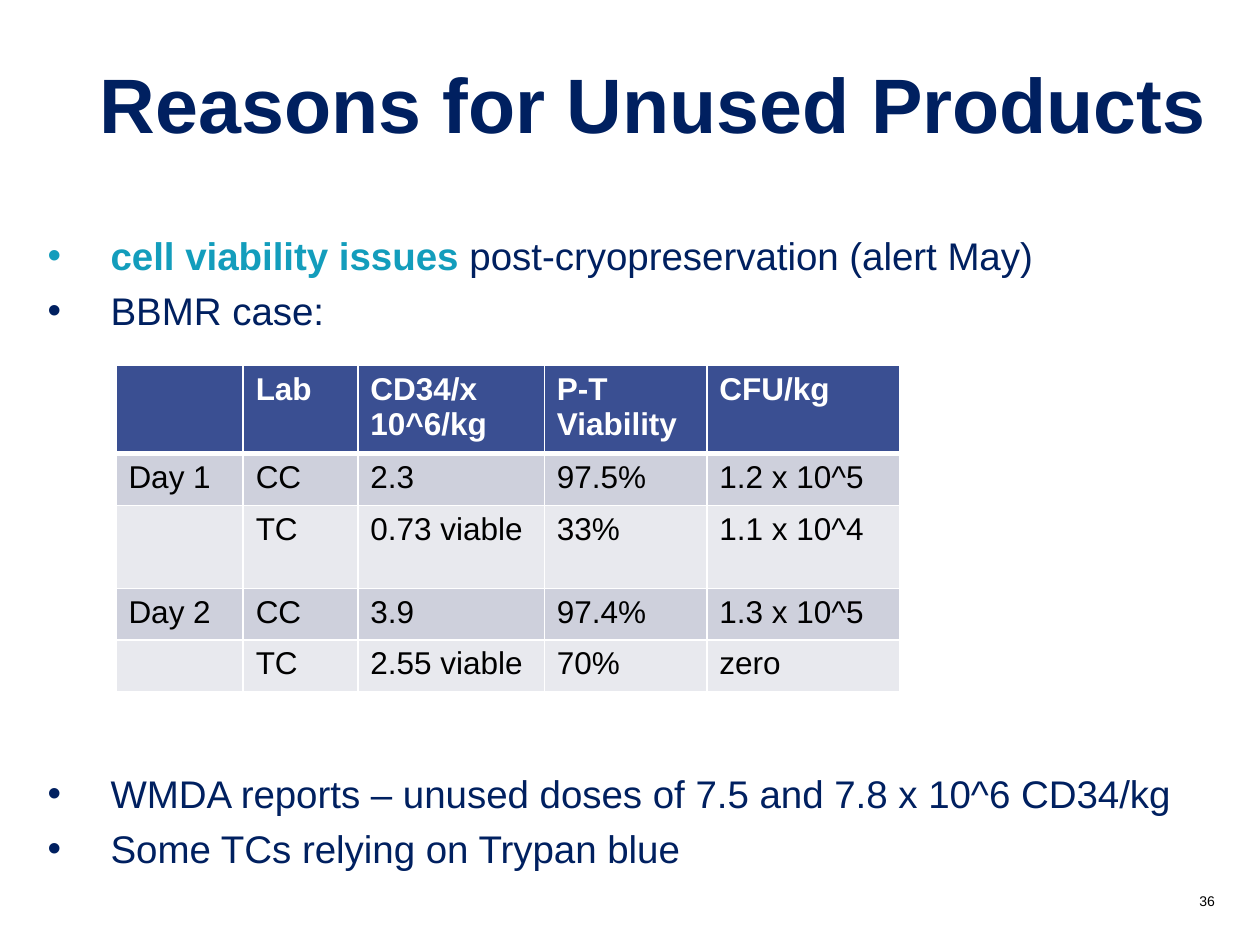
from dataclasses import dataclass
from lxml.etree import SubElement
from pptx import Presentation
from pptx.dml.color import RGBColor as Color
from pptx.enum.text import MSO_ANCHOR as Anchor, MSO_AUTO_SIZE as AutoSize, PP_ALIGN as Align
from pptx.oxml.ns import qn
from pptx.util import Inches, Pt


@dataclass(frozen=True)
class Theme:
    font: str = "Arial"
    navy: str = "002060"
    teal: str = "139DBC"
    white: str = "FFFFFF"
    black: str = "000000"
    header: str = "3A4F92"
    bands: tuple = ("CED0DC", "E8E9EE")
    title_size: float = 44.1
    body_size: float = 22
    table_size: float = 18
    number_size: float = 8


@dataclass(frozen=True)
class Span:
    text: str
    color: str
    size: float
    bold: bool = False


@dataclass(frozen=True)
class BulletGroup:
    top: float
    items: tuple


THEME = Theme()


def body(text: str) -> Span:
    return Span(text, THEME.navy, THEME.body_size)


GROUPS = (
    BulletGroup(1.79, (
        (Span("cell viability issues ", THEME.teal, THEME.body_size, True),
         body("post-cryopreservation (alert May)")),
        (body("BBMR case:"),),
    )),
    BulletGroup(6.06, (
        (body("WMDA reports – unused doses of 7.5 and 7.8 x 10^6 CD34/kg"),),
        (body("Some TCs relying on Trypan blue"),),
    )),
)
COLUMN_WIDTHS = (1.01, 0.91, 1.48, 1.29, 1.53)
ROW_HEIGHTS = (0.66, 0.41, 0.66, 0.41, 0.41)
VIABILITY_ROWS = (
    ("", "Lab", "CD34/x 10^6/kg", "P-T Viability", "CFU/kg"),
    ("Day 1", "CC", "2.3", "97.5%", "1.2 x 10^5"),
    ("", "TC", "0.73 viable", "33%", "1.1 x 10^4"),
    ("Day 2", "CC", "3.9", "97.4%", "1.3 x 10^5"),
    ("", "TC", "2.55 viable", "70%", "zero"),
)


def add_span(para, span: Span) -> None:
    run = para.add_run()
    run.text = span.text
    run.font.name = THEME.font
    run.font.size = Pt(span.size)
    run.font.bold = span.bold
    run.font.color.rgb = Color.from_string(span.color)


def add_title(page, text: str) -> None:
    title = page.shapes.title
    title.left, title.top = Inches(0.69), Inches(0.4)
    title.width, title.height = Inches(9.06), Inches(1.33)
    frame = title.text_frame
    frame.auto_size = AutoSize.NONE
    frame.word_wrap = True
    frame.vertical_anchor = Anchor.TOP
    para = frame.paragraphs[0]
    para.alignment = Align.LEFT
    add_span(para, Span(text, THEME.navy, THEME.title_size, True))


def add_bullets(page, group: BulletGroup) -> None:
    box = page.shapes.add_textbox(Inches(0.28), Inches(group.top), Inches(9.46), Inches(0.9))
    frame = box.text_frame
    frame.word_wrap = True
    for index, spans in enumerate(group.items):
        para = frame.add_paragraph() if index else frame.paragraphs[0]
        props = para._p.get_or_add_pPr()
        props.set("marL", str(Inches(0.5)))
        props.set("indent", str(-Inches(0.5)))
        SubElement(props, qn("a:buFont"), typeface=THEME.font)
        SubElement(props, qn("a:buChar"), char="•")
        if index:
            para.space_before = Pt(5)
        for span in spans:
            add_span(para, span)


def add_border(cell, side: str, width: float) -> None:
    line = SubElement(cell._tc.get_or_add_tcPr(), qn(f"a:{side}"), w=str(Pt(width)))
    fill = SubElement(line, qn("a:solidFill"))
    SubElement(fill, qn("a:srgbClr"), val=THEME.white)


def add_viability_table(page) -> None:
    table = page.shapes.add_table(
        len(ROW_HEIGHTS), len(COLUMN_WIDTHS), Inches(0.92), Inches(2.9),
        Inches(sum(COLUMN_WIDTHS)), Inches(sum(ROW_HEIGHTS))).table
    for column, width in zip(table.columns, COLUMN_WIDTHS):
        column.width = Inches(width)
    for index, (row, height, texts) in enumerate(zip(table.rows, ROW_HEIGHTS, VIABILITY_ROWS)):
        row.height = Inches(height)
        heading = index == 0
        fill = THEME.header if heading else THEME.bands[(index - 1) % 2]
        color = THEME.white if heading else THEME.black
        widths = {"lnL": 1, "lnR": 1, "lnT": 3 if index == 1 else 1, "lnB": 3 if heading else 1}
        for cell, text in zip(row.cells, texts):
            for side, width in widths.items():
                add_border(cell, side, width)
            cell.fill.solid()
            cell.fill.fore_color.rgb = Color.from_string(fill)
            para = cell.text_frame.paragraphs[0]
            para.font.size = Pt(THEME.table_size)
            if text:
                add_span(para, Span(text, color, THEME.table_size, heading))


def add_page_number(page, number: str) -> None:
    box = page.shapes.add_textbox(Inches(6.92), Inches(6.95), Inches(2.82), Inches(0.4))
    frame = box.text_frame
    frame.word_wrap = True
    frame.vertical_anchor = Anchor.MIDDLE
    para = frame.paragraphs[0]
    para.alignment = Align.RIGHT
    add_span(para, Span(number, THEME.black, THEME.number_size))


def main() -> None:
    deck = Presentation()
    deck.slide_width, deck.slide_height = Inches(10), Inches(7.5)
    page = deck.slides.add_slide(deck.slide_layouts[5])
    add_page_number(page, "36")
    for group in GROUPS:
        add_bullets(page, group)
    add_title(page, "Reasons for Unused Products")
    add_viability_table(page)
    deck.save("out.pptx")


if __name__ == "__main__":
    main()
